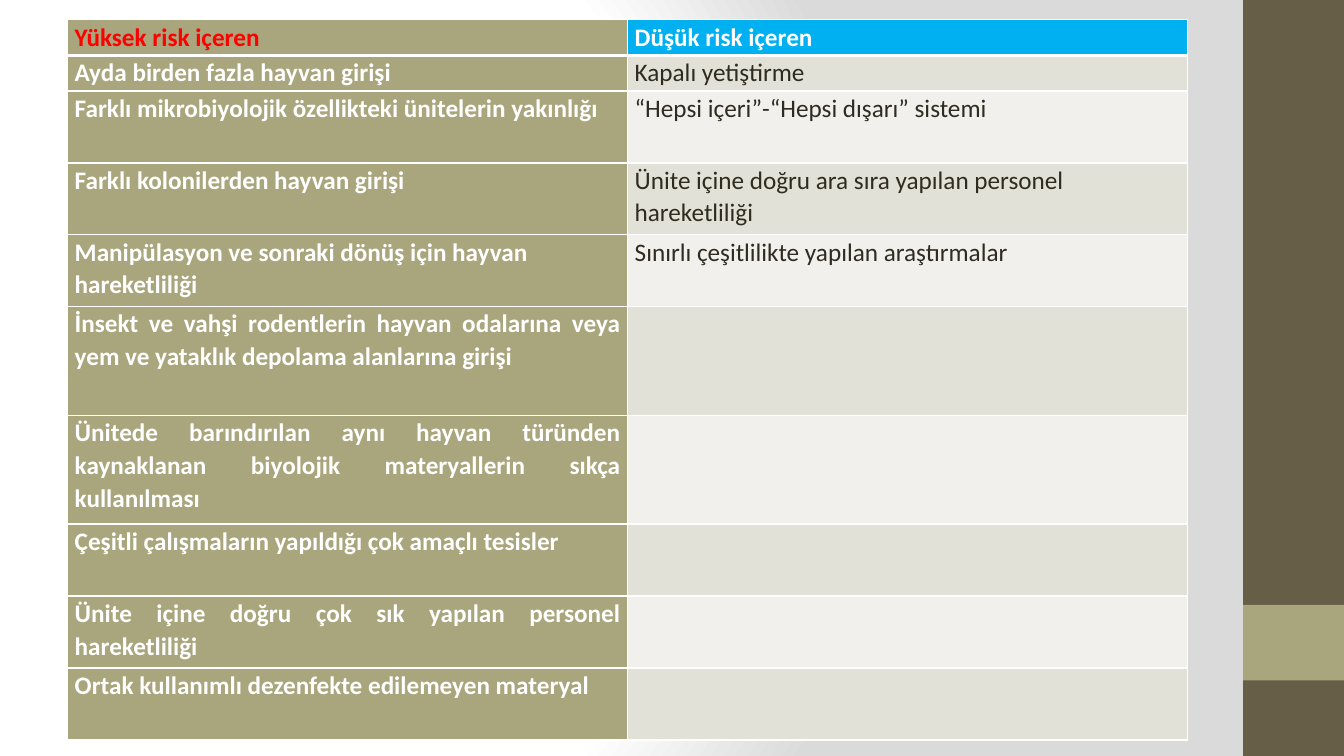
import dataclasses

import lxml.etree
import pptx
import pptx.dml.color
import pptx.enum.shapes
import pptx.enum.text
import pptx.oxml.ns
import pptx.util

Pt = pptx.util.Pt
qn = pptx.oxml.ns.qn
JUSTIFY = pptx.enum.text.PP_ALIGN.JUSTIFY

WHITE, RED, DARK_TEXT = "FFFFFF", "FF0000", "2F2B20"
BROWN, OLIVE, BLUE = "675E47", "A9A57C", "00B0F0"
BANDS = ("E2E1D7", "F1F0EC")
MARGINS = {"margin_left": Pt(5), "margin_right": Pt(5), "margin_top": Pt(0), "margin_bottom": Pt(0)}
BACKGROUND_STOPS = {0: WHITE, 75: WHITE, 100: "DADADA"}
BACKGROUND_FOCUS = {"l": 20, "t": 50, "r": 100, "b": 50}


@dataclasses.dataclass(frozen=True)
class RiskRow:
    height: float
    high: str
    low: str = ""
    justified: bool = False


@dataclasses.dataclass(frozen=True)
class SidePanel:
    top: float
    height: float
    color: str


RISK_ROWS = (
    RiskRow(25.4, "Yüksek risk içeren", "Düşük risk içeren"),
    RiskRow(25.4, "Ayda birden fazla hayvan girişi", "Kapalı yetiştirme"),
    RiskRow(51.4, "Farklı mikrobiyolojik özellikteki ünitelerin yakınlığı",
            "“Hepsi içeri”-“Hepsi dışarı” sistemi"),
    RiskRow(51.4, "Farklı kolonilerden hayvan girişi",
            "Ünite içine doğru ara sıra yapılan personel hareketliliği"),
    RiskRow(51.4, "Manipülasyon ve sonraki dönüş için hayvan hareketliliği",
            "Sınırlı çeşitlilikte yapılan araştırmalar"),
    RiskRow(77.6, "İnsekt ve vahşi rodentlerin hayvan odalarına veya yem ve yataklık "
            "depolama alanlarına girişi", justified=True),
    RiskRow(77.6, "Ünitede barındırılan aynı hayvan türünden kaynaklanan biyolojik "
            "materyallerin sıkça kullanılması", justified=True),
    RiskRow(51.4, "Çeşitli çalışmaların yapıldığı çok amaçlı tesisler", justified=True),
    RiskRow(51.4, "Ünite içine doğru çok sık yapılan personel hareketliliği", justified=True),
    RiskRow(51.4, "Ortak kullanımlı dezenfekte edilemeyen materyal ", justified=True),
)
SIDE_PANELS = (SidePanel(0, 540, BROWN), SidePanel(432, 54, OLIVE))


def paint(fill, color: str) -> None:
    fill.solid()
    fill.fore_color.rgb = pptx.dml.color.RGBColor.from_string(color)


def add_color(parent, color: str) -> None:
    lxml.etree.SubElement(parent, qn("a:srgbClr"), val=color)


def paint_background(slide) -> None:
    """Fill the slide with a circular gradient."""
    slide.background.fill.gradient()
    gradient = slide.element.find(".//" + qn("a:gradFill"))
    for child in list(gradient):
        gradient.remove(child)
    stops = lxml.etree.SubElement(gradient, qn("a:gsLst"))
    for percent, color in BACKGROUND_STOPS.items():
        add_color(lxml.etree.SubElement(stops, qn("a:gs"), pos=str(percent * 1000)), color)
    circle = lxml.etree.SubElement(gradient, qn("a:path"))
    circle.set("path", "circle")
    focus = lxml.etree.SubElement(circle, qn("a:fillToRect"))
    for side, percent in BACKGROUND_FOCUS.items():
        focus.set(side, str(percent * 1000))


def add_side_panel(slide, panel: SidePanel) -> None:
    shape = slide.shapes.add_shape(pptx.enum.shapes.MSO_SHAPE.RECTANGLE,
                                   Pt(888), Pt(panel.top), Pt(72), Pt(panel.height))
    shape.shadow.inherit = False
    paint(shape.fill, panel.color)
    shape.line.fill.background()


def add_borders(cell, row: int) -> None:
    """Draw white edges, with a thick one under the header."""
    widths = {"L": 1, "R": 1, "T": 3 if row == 1 else 1, "B": 3 if row == 0 else 1}
    properties = cell._tc.get_or_add_tcPr()
    for side, width in widths.items():
        edge = lxml.etree.SubElement(properties, qn(f"a:ln{side}"), w=str(Pt(width)))
        add_color(lxml.etree.SubElement(edge, qn("a:solidFill")), WHITE)


def fill_cell(cell, row: int, text: str, fill: str, color: str, bold: bool,
              justified: bool) -> None:
    add_borders(cell, row)
    paint(cell.fill, fill)
    if not text:
        return
    for name, value in MARGINS.items():
        setattr(cell, name, value)
    paragraph = cell.text_frame.paragraphs[0]
    paragraph.line_spacing = 1.07
    if justified:
        paragraph.alignment = JUSTIFY
    run = paragraph.add_run()
    run.text = text
    for name, value in {"name": "Calibri", "size": Pt(18), "bold": bold}.items():
        setattr(run.font, name, value)
    paint(run.font.fill, color)


def add_risk_table(slide) -> None:
    total = sum(row.height for row in RISK_ROWS)
    table = slide.shapes.add_table(len(RISK_ROWS), 2, Pt(48.4), Pt(14.2),
                                   Pt(800), Pt(total)).table
    for column in table.columns:
        column.width = Pt(400)
    for index, row in enumerate(RISK_ROWS):
        header = index == 0
        table.rows[index].height = Pt(row.height)
        fill_cell(table.cell(index, 0), index, row.high, OLIVE,
                  RED if header else WHITE, True, row.justified)
        fill_cell(table.cell(index, 1), index, row.low,
                  BLUE if header else BANDS[(index - 1) % 2],
                  WHITE if header else DARK_TEXT, header, False)


def main() -> None:
    deck = pptx.Presentation()
    deck.slide_width, deck.slide_height = Pt(960), Pt(540)
    slide = deck.slides.add_slide(deck.slide_layouts[6])
    paint_background(slide)
    for panel in SIDE_PANELS:
        add_side_panel(slide, panel)
    add_risk_table(slide)
    deck.save("out.pptx")


if __name__ == "__main__":
    main()
